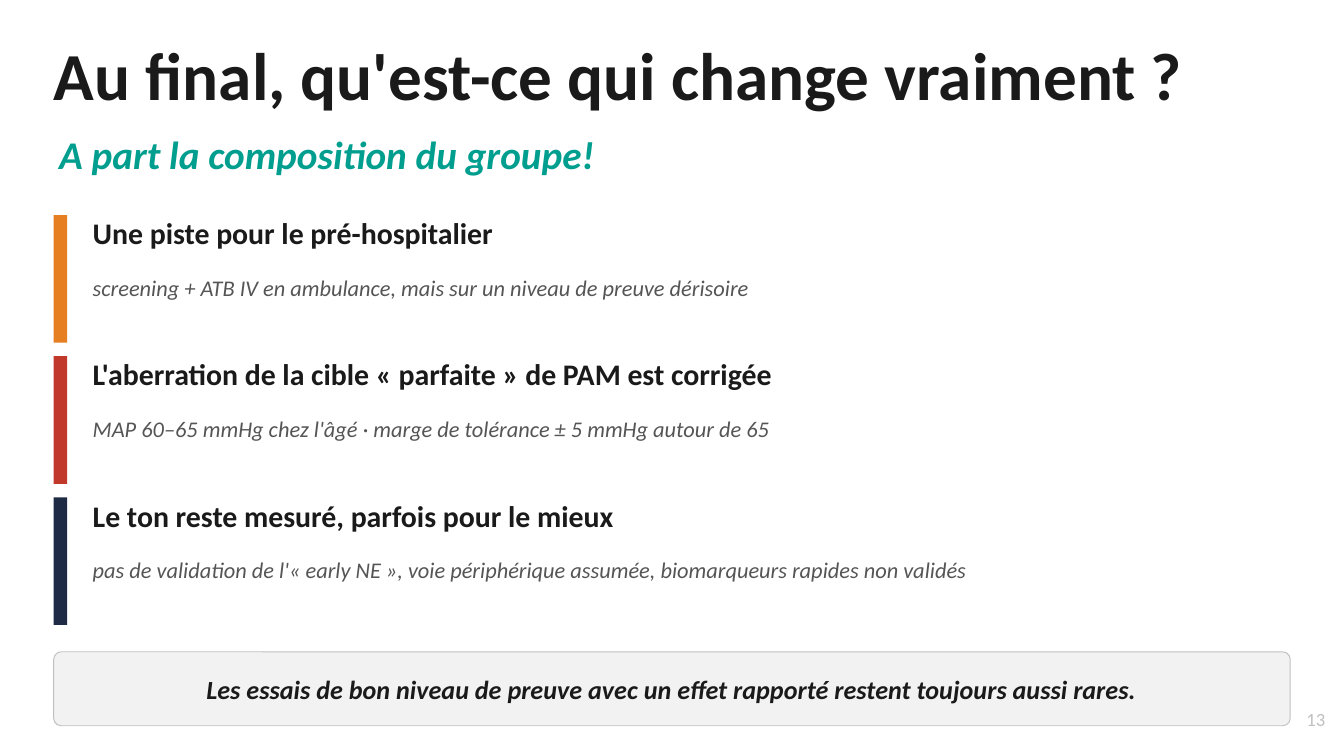
from pptx import Presentation
from pptx.dml.color import RGBColor
from pptx.enum.shapes import MSO_SHAPE as Shape
from pptx.enum.text import MSO_ANCHOR as Anchor, MSO_AUTO_SIZE as AutoSize, PP_ALIGN as Align
from pptx.util import Inches, Pt

# Content
TITLE = "Au final, qu'est-ce qui change vraiment ?"
SUBTITLE = "A part la composition du groupe!"
POINTS = [
    ("orange", "Une piste pour le pré-hospitalier",
     "screening + ATB IV en ambulance, mais sur un niveau de preuve dérisoire"),
    ("red", "L'aberration de la cible « parfaite » de PAM est corrigée",
     "MAP 60–65 mmHg chez l'âgé · marge de tolérance ± 5 mmHg autour de 65"),
    ("navy", "Le ton reste mesuré, parfois pour le mieux",
     "pas de validation de l'« early NE », voie périphérique assumée, "
     "biomarqueurs rapides non validés"),
]
CONCLUSION = "Les essais de bon niveau de preuve avec un effet rapporté restent toujours aussi rares."
PAGE_NUMBER = "13"

# Look
COLORS = {
    "ink": "1A1A1A", "teal": "009E8E", "grey": "555555", "silver": "C0C0C0",
    "pale": "F2F2F2", "orange": "E67E22", "red": "C0392B", "navy": "1F2A44",
}
FORMATS = {
    "title": {"size": Pt(36), "bold": True},
    "subtitle": {"size": Pt(21), "bold": True, "italic": True},
    "heading": {"size": Pt(16), "bold": True},
    "detail": {"size": Pt(12), "italic": True},
    "conclusion": {"size": Pt(14), "bold": True, "italic": True},
    "number": {"size": Pt(10)},
}
LEFT, TEXT_LEFT, TEXT_WIDTH = 0.4, 0.65, 9
FIRST_TOP, BAR_WIDTH, BAR_HEIGHT, GAP = 1.6, 0.1, 0.95, 0.1

# A 16:9 page
deck = Presentation()
deck.slide_width = Inches(10)
deck.slide_height = Inches(10 * 9 / 16)
page = deck.slides.add_slide(deck.slide_layouts[6])


def color(name):
    return RGBColor.from_string(COLORS[name])


def add_text(text, style, ink, area, align=Align.LEFT, anchor=Anchor.TOP,
             insets=(0.04, 0.02), wrap=True):
    box = page.shapes.add_textbox(*map(Inches, area))
    frame = box.text_frame
    side, edge = map(Inches, insets)
    frame.margin_left = frame.margin_right = side
    frame.margin_top = frame.margin_bottom = edge
    frame.word_wrap = wrap
    frame.auto_size = AutoSize.SHAPE_TO_FIT_TEXT
    frame.vertical_anchor = anchor
    para = frame.paragraphs[0]
    para.alignment = align
    span = para.add_run()
    span.text = text
    span.font.name = "Calibri"
    span.font.color.rgb = color(ink)
    for name, value in FORMATS[style].items():
        setattr(span.font, name, value)


def add_block(kind, fill, area):
    block = page.shapes.add_shape(kind, *map(Inches, area))
    block.shadow.inherit = False
    block.fill.solid()
    block.fill.fore_color.rgb = color(fill)
    block.line.fill.background()
    return block


# Title and subtitle
add_text(TITLE, "title", "ink", (LEFT, 0.25, 8.49, 0.61), insets=(0, 0), wrap=False)
add_text(SUBTITLE, "subtitle", "teal", (LEFT, 0.95, TEXT_WIDTH, 0.4))

# Points, each with a coloured bar
for index, (accent, heading, detail) in enumerate(POINTS):
    top = FIRST_TOP + index * (BAR_HEIGHT + GAP)
    add_block(Shape.RECTANGLE, accent, (LEFT, top, BAR_WIDTH, BAR_HEIGHT))
    add_text(heading, "heading", "ink", (TEXT_LEFT, top - 0.02, TEXT_WIDTH, 0.31))
    add_text(detail, "detail", "grey", (TEXT_LEFT, top + 0.42, TEXT_WIDTH, 0.24))

# Conclusion panel
panel = add_block(Shape.ROUNDED_RECTANGLE, "pale", (LEFT, 4.85, 9.2, 0.55))
panel.adjustments[0] = 0.1
panel.line.color.rgb = color("silver")
panel.line.width = Pt(0.5)
add_text(CONCLUSION, "conclusion", "ink", (0.5, 4.99, TEXT_WIDTH, 0.28),
         Align.CENTER, Anchor.MIDDLE)

# Page number
add_text(PAGE_NUMBER, "number", "silver", (9.6, 5.25, 0.3, 0.21), Align.RIGHT)

deck.save("out.pptx")
